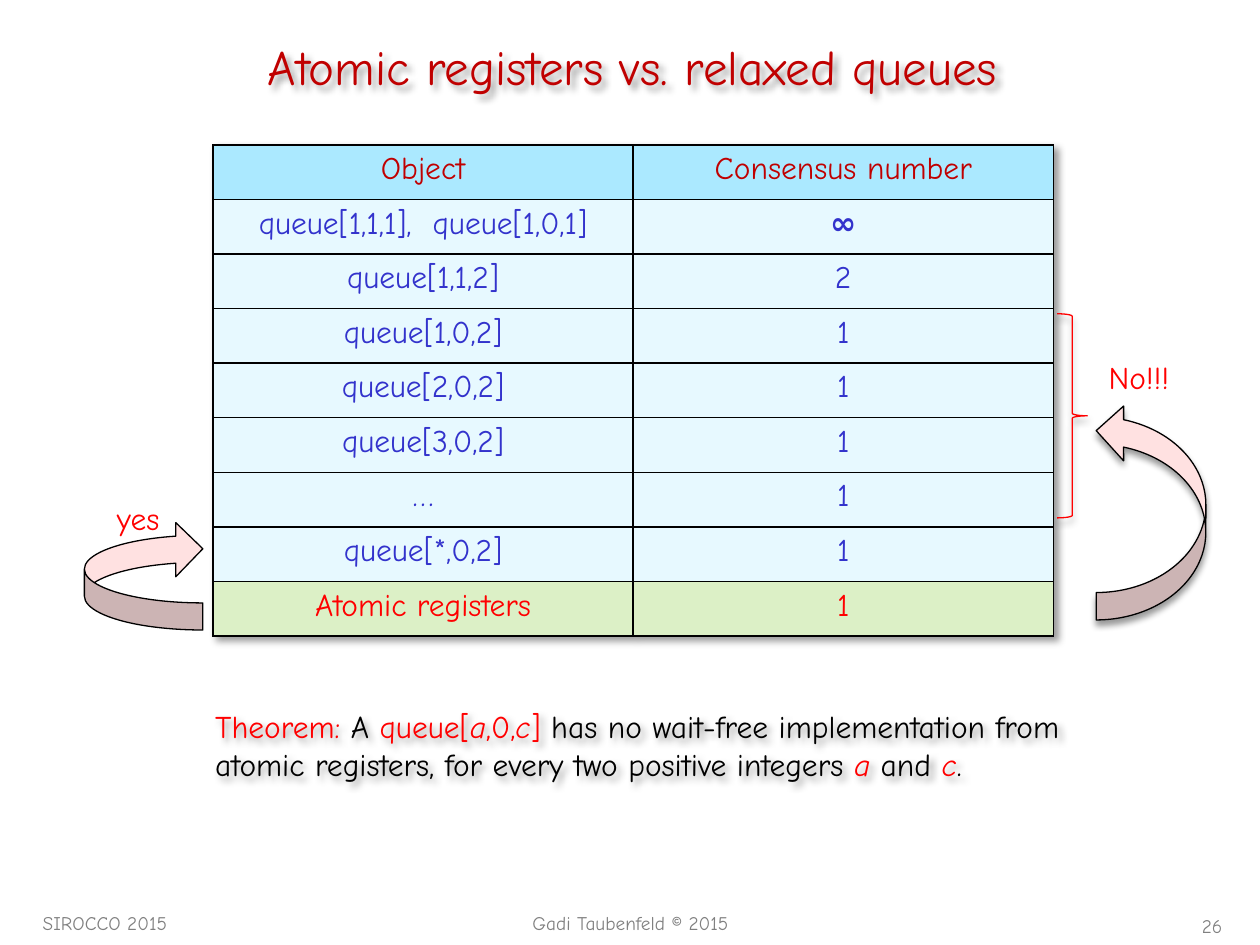
from dataclasses import dataclass
from typing import NamedTuple

from lxml.etree import SubElement
from pptx import Presentation
from pptx.dml.color import RGBColor
from pptx.enum.shapes import MSO_SHAPE
from pptx.enum.text import MSO_ANCHOR, PP_ALIGN
from pptx.oxml import parse_xml
from pptx.oxml.ns import nsdecls, qn
from pptx.util import Inches, Pt


@dataclass(frozen=True)
class Theme:
    font: str = "Comic Neue"
    title: int = 28
    body: int = 18
    small: int = 11
    black: str = "000000"
    dark: str = "C00000"
    red: str = "FF0000"
    blue: str = "3333CC"
    gray: str = "808080"
    head: str = "ABE9FF"
    pale: str = "E7F9FF"
    green: str = "DCF0C6"
    pink: str = "FFE1E1"


THEME = Theme()
UNIT = Inches(0.1)
COLS, ROWS = 100, 75


class Box(NamedTuple):
    left: float
    top: float
    width: float
    height: float

    def inner(self, left, top, width, height):
        return Box(self.left + left, self.top + top, width, height)

    def size(self):
        return [round(side * UNIT) for side in self]


def rgb(color):
    return RGBColor.from_string(color)


def write(frame, *lines, size=THEME.body, color=THEME.black,
          align=PP_ALIGN.LEFT, bold=False, wrap=True):
    frame.word_wrap = wrap
    for index, line in enumerate(lines):
        para = frame.add_paragraph() if index else frame.paragraphs[0]
        para.alignment = align
        for words, tint, slant in [(line, color, False)] if isinstance(line, str) else line:
            run = para.add_run()
            run.text = words
            font = run.font
            font.name, font.size = THEME.font, Pt(size)
            font.bold, font.italic = bold, slant
            font.color.rgb = rgb(tint)


def label(slide, box, *lines, **style):
    shape = slide.shapes.add_textbox(*box.size())
    write(shape.text_frame, *lines, **style)
    return shape


def glow(effects, angle):
    shade = SubElement(effects, qn("a:outerShdw"), blurRad=str(Pt(4)),
                       dist=str(Pt(3)), dir=str(angle * 60000),
                       algn="tl", rotWithShape="0")
    color = SubElement(shade, qn("a:srgbClr"), val=THEME.black)
    SubElement(color, qn("a:alpha"), val="40000")


def shadow(shape, angle):
    shape.shadow.inherit = False
    glow(shape._element.spPr.find(qn("a:effectLst")), angle)


def draw(slide, kind, box, fill=None, line=THEME.black, turn=0):
    shape = slide.shapes.add_shape(kind, *box.size())
    shape.rotation = turn
    shape.shadow.inherit = False
    if fill:
        shape.fill.solid()
        shape.fill.fore_color.rgb = rgb(fill)
    else:
        shape.fill.background()
    shape.line.color.rgb = rgb(line)
    shape.line.width = Pt(0.75)
    return shape


def heading(slide, box):
    title = slide.shapes.title
    title.left, title.top, title.width, title.height = box.size()
    title.text_frame.vertical_anchor = MSO_ANCHOR.MIDDLE
    write(title.text_frame, "Atomic registers vs. relaxed queues",
          size=THEME.title, color=THEME.dark, align=PP_ALIGN.CENTER)
    shadow(title, 45)


def border(cell):
    props = cell._tc.get_or_add_tcPr()
    for index, side in enumerate("LRTB"):
        props.insert(index, parse_xml(
            f'<a:ln{side} {nsdecls("a")} w="{Pt(1)}"><a:solidFill>'
            f'<a:srgbClr val="{THEME.black}"/></a:solidFill></a:ln{side}>'))


def ranking(slide, box):
    rows = [("Object", "Consensus number"),
            ("queue[1,1,1],  queue[1,0,1]", "∞"),
            ("queue[1,1,2]", "2")]
    rows += [(name, "1") for name in (
        "queue[1,0,2]", "queue[2,0,2]", "queue[3,0,2]", "…",
        "queue[*,0,2]", "Atomic registers")]
    looks = [(THEME.head, THEME.dark)]
    looks += [(THEME.pale, THEME.blue)] * (len(rows) - 2)
    looks += [(THEME.green, THEME.red)]
    table = slide.shapes.add_table(len(rows), 2, *box.size()).table
    table.first_row = table.horz_banding = False
    props = table._tbl.tblPr
    effects = parse_xml(f'<a:effectLst {nsdecls("a")}/>')
    glow(effects, 45)
    props.insert(0, effects)
    for y, (row, (fill, color)) in enumerate(zip(rows, looks)):
        for x, words in enumerate(row):
            cell = table.cell(y, x)
            cell.fill.solid()
            cell.fill.fore_color.rgb = rgb(fill)
            border(cell)
            write(cell.text_frame, words, color=color,
                  align=PP_ALIGN.CENTER, bold=words == "∞")


def agree(slide, box):
    draw(slide, MSO_SHAPE.CURVED_LEFT_ARROW, box.inner(0, 2.3, 9.4, 8.6),
         fill=THEME.pink, turn=180)
    label(slide, box.inner(1.6, 0, 7.1, 4), "yes", color=THEME.red)


def deny(slide, box):
    arrow = draw(slide, MSO_SHAPE.CURVED_RIGHT_ARROW,
                 box.inner(3.1, 7.1, 8.7, 17.2), fill=THEME.pink, turn=180)
    brace = draw(slide, MSO_SHAPE.RIGHT_BRACE, box.inner(0, 0, 2.4, 16.2),
                 line=THEME.red)
    for shape in (arrow, brace):
        shadow(shape, 90)
    label(slide, box.inner(3.1, 3, 7.2, 4), "No!!!", color=THEME.red, wrap=False)


def theorem(slide, box):
    red, black = THEME.red, THEME.black
    first = [("Theorem:", red, False), (" A ", black, False),
             ("queue[", red, False), ("a", red, True), (",0,", red, False),
             ("c", red, True), ("]", red, False),
             (" has no wait-free implementation from", black, False)]
    second = [("atomic registers, for every two positive integers ", black, False),
              ("a", red, True), (" and ", black, False),
              ("c", red, True), (".", black, False)]
    shadow(label(slide, box, first, second, wrap=False), 45)


def footer(slide, box):
    style = dict(size=THEME.small, color=THEME.gray)
    label(slide, box.inner(0, 0, 20.8, 2.7), "SIROCCO 2015", **style)
    label(slide, box.inner(37.4, 0, 20.5, 2.7), "Gadi Taubenfeld © 2015",
          align=PP_ALIGN.CENTER, **style)
    label(slide, box.inner(90.9, 0.3, 4.7, 2.9), "26",
          align=PP_ALIGN.RIGHT, **style)


def main():
    deck = Presentation()
    deck.slide_width, deck.slide_height = COLS * UNIT, ROWS * UNIT
    slide = deck.slides.add_slide(deck.slide_layouts[5])
    heading(slide, Box(2.7, 1.3, 95, 7.9))
    ranking(slide, Box(16.9, 11.5, 66.7, 39))
    agree(slide, Box(6.7, 39.1, 9.4, 10.9))
    deny(slide, Box(83.9, 24.9, 11.8, 24.3))
    theorem(slide, Box(16.1, 55.6, 76.7, 7.1))
    footer(slide, Box(2.4, 71.8, 95.6, 3.2))
    deck.save("out.pptx")


if __name__ == "__main__":
    main()
